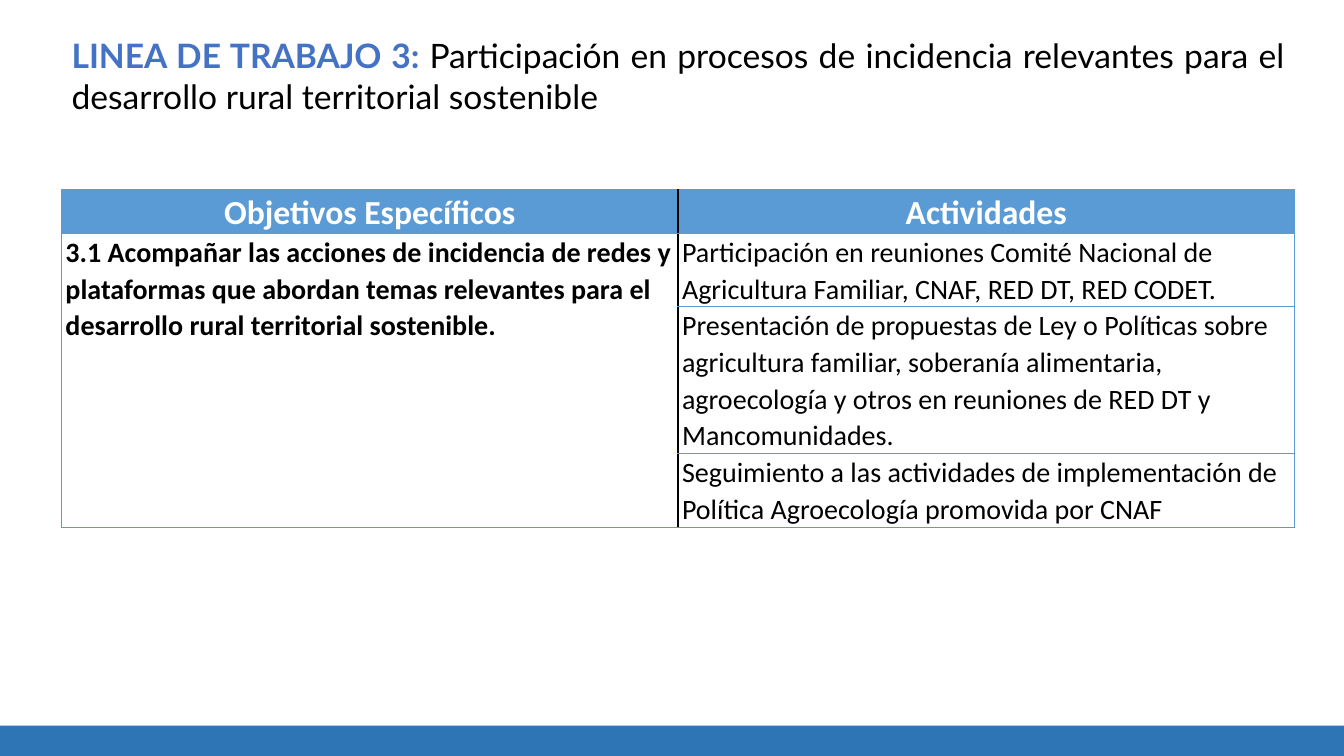
from lxml.etree import SubElement
from pptx import Presentation
from pptx.dml.color import RGBColor
from pptx.enum.shapes import MSO_SHAPE
from pptx.enum.text import MSO_ANCHOR, MSO_AUTO_SIZE, PP_ALIGN
from pptx.oxml.ns import qn
from pptx.util import Inches, Pt

TITLE_BLUE = RGBColor(0x44, 0x72, 0xC4)
BAR_BLUE = RGBColor(0x2E, 0x75, 0xB6)
TABLE_BLUE = RGBColor(0x5B, 0x9B, 0xD5)
BLACK = RGBColor(0, 0, 0)
WHITE = RGBColor(0xFF, 0xFF, 0xFF)

TITLE = [
    ("LINEA DE TRABAJO 3: ", TITLE_BLUE, True),
    ("Participación en procesos de incidencia relevantes para el desarrollo "
     "rural territorial sostenible", BLACK, False),
]
HEADERS = ["Objetivos Específicos", "Actividades"]
OBJECTIVE = ("3.1 Acompañar las acciones de incidencia de redes y plataformas que abordan "
             "temas relevantes para el desarrollo rural territorial sostenible.")
ACTIVITIES = [
    "Participación en reuniones Comité Nacional de Agricultura Familiar, CNAF, RED DT, RED CODET.",
    "Presentación de propuestas de Ley o Políticas sobre agricultura familiar, soberanía "
    "alimentaria, agroecología y otros en reuniones de RED DT y Mancomunidades.",
    "Seguimiento a las actividades de implementación de Política Agroecología promovida por CNAF",
]
ROW_HEIGHTS = [0.43, 0.71, 1.42, 0.71]
LEFT, WIDTH = 0.61, 12.23


def add_run(p, text, font, size, color, bold):
    """Append one formatted run to a paragraph."""
    r = p.add_run()
    r.text = text
    r.font.name = font
    r.font.size = Pt(size)
    r.font.bold = bold
    r.font.color.rgb = color


def set_borders(cell, col):
    """Draw the cell borders, with a black line between the two columns."""
    tc_pr = cell._tc.get_or_add_tcPr()
    inner = "lnR" if col == 0 else "lnL"
    for i, side in enumerate(("lnL", "lnR", "lnT", "lnB")):
        color, width = (BLACK, 1) if side == inner else (TABLE_BLUE, 0.5)
        ln = SubElement(tc_pr, qn(f"a:{side}"), w=str(Pt(width)))
        fill = SubElement(ln, qn("a:solidFill"))
        SubElement(fill, qn("a:srgbClr"), val=str(color))
        tc_pr.insert(i, ln)


def fill_cell(cell, text, size, color, bold, align, anchor):
    """Write the text of a table cell."""
    cell.margin_left = cell.margin_right = Inches(0.04)
    cell.margin_top = cell.margin_bottom = 0
    cell.vertical_anchor = anchor
    p = cell.text_frame.paragraphs[0]
    p.alignment = align
    p.line_spacing = 1.07
    add_run(p, text, "Calibri", size, color, bold)


def add_title(s):
    """Place the two-coloured title."""
    title = s.shapes.title
    title.left, title.top = Inches(LEFT), Inches(0.3)
    title.width, title.height = Inches(WIDTH), Inches(0.91)
    tf = title.text_frame
    tf.word_wrap = True
    tf.auto_size = MSO_AUTO_SIZE.NONE
    tf.vertical_anchor = MSO_ANCHOR.TOP
    p = tf.paragraphs[0]
    p.alignment = PP_ALIGN.JUSTIFY
    for text, color, bold in TITLE:
        add_run(p, text, "Lato", 24, color, bold)


def add_objectives_table(s):
    """Build the table of objectives and activities."""
    table = s.shapes.add_table(len(ROW_HEIGHTS), len(HEADERS), Inches(LEFT), Inches(1.88),
                               Inches(WIDTH), Inches(sum(ROW_HEIGHTS))).table
    table.first_row = table.horz_banding = False
    for row, height in zip(table.rows, ROW_HEIGHTS):
        row.height = Inches(height)
        for col, cell in enumerate(row.cells):
            cell.fill.background()
            set_borders(cell, col)
    for col, text in enumerate(HEADERS):
        cell = table.cell(0, col)
        cell.fill.solid()
        cell.fill.fore_color.rgb = TABLE_BLUE
        fill_cell(cell, text, 24, WHITE, True, PP_ALIGN.CENTER, MSO_ANCHOR.BOTTOM)
    objective = table.cell(1, 0)
    objective.merge(table.cell(len(ACTIVITIES), 0))
    fill_cell(objective, OBJECTIVE, 20, BLACK, True, PP_ALIGN.LEFT, MSO_ANCHOR.TOP)
    for row, text in enumerate(ACTIVITIES, 1):
        anchor = MSO_ANCHOR.TOP if row == 1 else MSO_ANCHOR.BOTTOM
        fill_cell(table.cell(row, 1), text, 20, BLACK, False, PP_ALIGN.LEFT, anchor)


def main():
    """Build the slide and save it."""
    prs = Presentation()
    prs.slide_width, prs.slide_height = Inches(13.33), Inches(7.5)
    s = prs.slides.add_slide(prs.slide_layouts[5])
    bar = s.shapes.add_shape(MSO_SHAPE.RECTANGLE, 0, Inches(7.2), prs.slide_width, Inches(0.3))
    bar.shadow.inherit = False
    bar.fill.solid()
    bar.fill.fore_color.rgb = BAR_BLUE
    bar.line.fill.background()
    add_title(s)
    add_objectives_table(s)
    prs.save("out.pptx")


if __name__ == "__main__":
    main()
